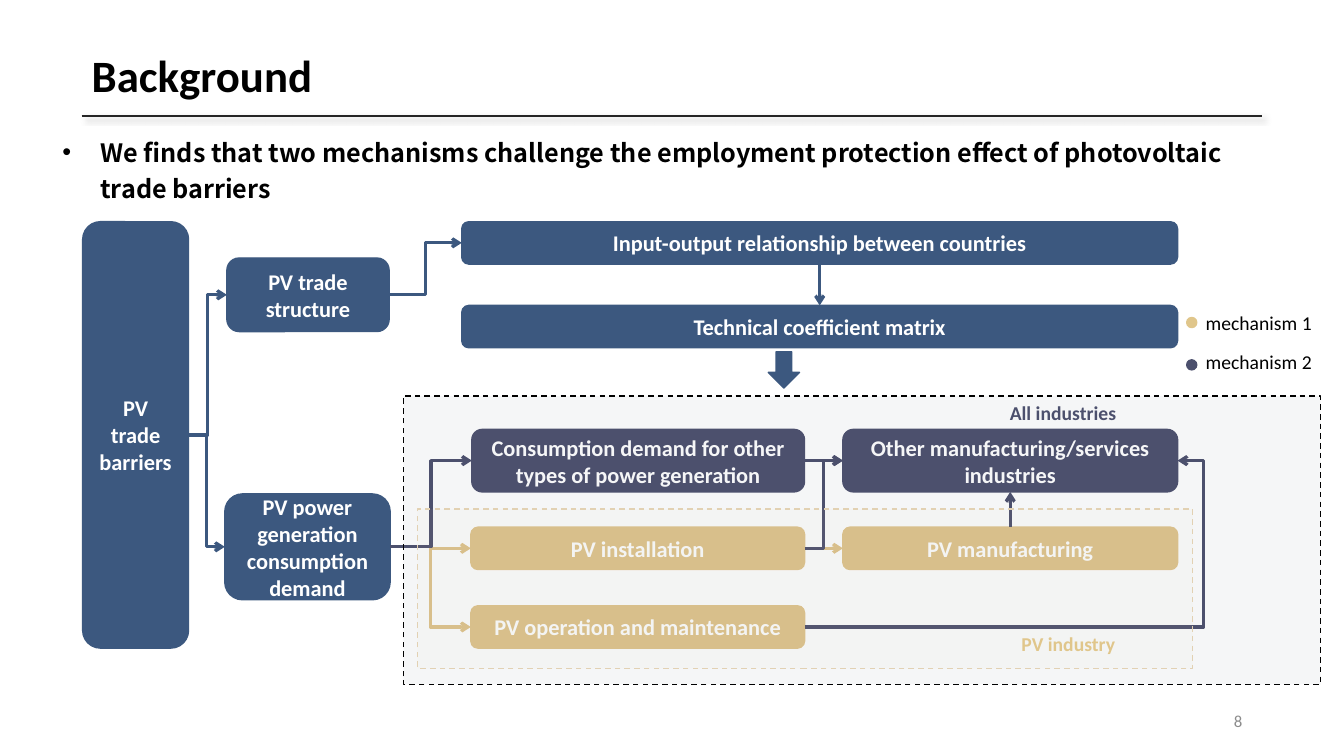
import dataclasses
import enum

import lxml.etree
import pptx
import pptx.dml.color
import pptx.enum.dml
import pptx.enum.shapes
import pptx.enum.text
import pptx.oxml.ns
import pptx.shapes.base
import pptx.shapes.connector
import pptx.shapes.autoshape
import pptx.text.text
import pptx.util

Inches = pptx.util.Inches
Kind = pptx.enum.shapes.MSO_SHAPE
Connector = pptx.enum.shapes.MSO_CONNECTOR
Align = pptx.enum.text.PP_ALIGN
Anchor = pptx.enum.text.MSO_ANCHOR


@dataclasses.dataclass(frozen=True)
class Theme:
    navy: str = "3C587F"
    gold: str = "E0C68B"
    pale_gold: str = "EBD8B7"
    purple: str = "4C506D"
    black: str = "000000"
    rule: str = "262626"
    shadow: str = "808080"
    gray: str = "8C8C8C"
    white: str = "FFFFFF"
    font: str = "Calibri"
    body_font: str = "Noto Sans CJK SC"
    title_size: int = 32
    body_size: int = 18
    box_size: int = 16
    label_size: int = 14
    number_size: int = 12
    outline: float = 1
    link: float = 2.25


THEME = Theme()


class Side(enum.IntEnum):
    TOP = 0
    LEFT = 1
    BOTTOM = 2
    RIGHT = 3


@dataclasses.dataclass(frozen=True)
class Area:
    left: float
    top: float
    width: float
    height: float

    def lengths(self) -> tuple:
        return tuple(Inches(value) for value in dataclasses.astuple(self))


@dataclasses.dataclass(frozen=True)
class Box:
    key: str
    text: str
    area: Area
    color: str


@dataclasses.dataclass(frozen=True)
class Link:
    start: str
    end: str
    color: str
    elbow: bool = True
    start_side: Side = Side.RIGHT
    end_side: Side = Side.LEFT
    turn: float = 0.5


@dataclasses.dataclass(frozen=True)
class Label:
    text: str
    area: Area
    color: str
    size: int = THEME.label_size
    bold: bool = False
    align: Align = Align.LEFT
    anchor: Anchor = Anchor.TOP


@dataclasses.dataclass(frozen=True)
class Zone:
    area: Area
    fill: str
    line: str


BOXES = (
    Box("barriers", "PV trade barriers", Area(0.82, 2.2, 1.05, 4.23), THEME.navy),
    Box("demand", "PV power generation consumption demand", Area(2.23, 4.9, 1.64, 1.05), THEME.navy),
    Box("structure", "PV trade structure", Area(2.25, 2.56, 1.61, 0.73), THEME.navy),
    Box("relationship", "Input-output relationship between countries", Area(4.58, 2.2, 7.1, 0.42), THEME.navy),
    Box("matrix", "Technical coefficient matrix", Area(4.58, 3.03, 7.1, 0.42), THEME.navy),
    Box("installation", "PV installation", Area(4.67, 5.23, 3.31, 0.42), THEME.gold),
    Box("maintenance", "PV operation and maintenance", Area(4.67, 6.01, 3.31, 0.42), THEME.gold),
    Box("manufacturing", "PV manufacturing", Area(8.36, 5.23, 3.32, 0.42), THEME.gold),
    Box("other_power", "Consumption demand for other types of power generation", Area(4.68, 4.26, 3.3, 0.62), THEME.purple),
    Box("other_industries", "Other manufacturing/services industries", Area(8.36, 4.26, 3.32, 0.62), THEME.purple),
)
LINKS = (
    Link("barriers", "structure", THEME.navy),
    Link("barriers", "demand", THEME.navy),
    Link("structure", "relationship", THEME.navy),
    Link("relationship", "matrix", THEME.navy, False, Side.BOTTOM, Side.TOP),
    Link("demand", "maintenance", THEME.gold),
    Link("demand", "installation", THEME.gold),
    Link("demand", "other_power", THEME.purple),
    Link("installation", "manufacturing", THEME.gold, False),
    Link("other_power", "other_industries", THEME.purple, False),
    Link("manufacturing", "other_industries", THEME.purple, False, Side.TOP, Side.BOTTOM),
    Link("maintenance", "other_industries", THEME.purple, True, Side.RIGHT, Side.RIGHT, 1.07),
    Link("installation", "other_industries", THEME.purple),
)
ZONES = (
    Zone(Area(4.14, 5.05, 7.69, 1.58), THEME.pale_gold, THEME.pale_gold),
    Zone(Area(4, 3.93, 9.1, 2.86), THEME.purple, THEME.black),
)
LABELS = (
    Label("PV industry", Area(9.86, 6.22, 1.3, 0.34), THEME.gold, bold=True, align=Align.RIGHT),
    Label("All industries", Area(9.75, 3.93, 1.42, 0.34), THEME.purple, bold=True, align=Align.RIGHT),
    Label("8", Area(9.42, 6.95, 3, 0.4), THEME.gray, THEME.number_size, align=Align.RIGHT, anchor=Anchor.MIDDLE),
)
LEGEND = (
    (Area(11.77, 3.15, 0.1, 0.1), Label("mechanism 1", Area(11.86, 3.04, 1.38, 0.34), THEME.black), THEME.gold),
    (Area(11.77, 3.57, 0.1, 0.1), Label("mechanism 2", Area(11.86, 3.42, 1.38, 0.34), THEME.black), THEME.purple),
)


def rgb(value: str) -> pptx.dml.color.RGBColor:
    return pptx.dml.color.RGBColor.from_string(value)


def add_node(parent, tag: str, **attributes: str):
    return lxml.etree.SubElement(parent, pptx.oxml.ns.qn(tag), attributes)


def write(frame: pptx.text.text.TextFrame, text: str, size: int, color: str, bold: bool,
          align: Align, anchor: Anchor, font: str = THEME.font) -> pptx.text.text._Paragraph:
    frame.auto_size = pptx.enum.text.MSO_AUTO_SIZE.NONE
    frame.word_wrap = True
    frame.vertical_anchor = anchor
    paragraph = frame.paragraphs[0]
    paragraph.text = text
    paragraph.alignment = align
    paragraph.font.name = font
    paragraph.font.size = pptx.util.Pt(size)
    paragraph.font.bold = bold
    paragraph.font.color.rgb = rgb(color)
    return paragraph


def add_filled(shapes, kind: Kind, area: Area, fill: str, line: str) -> pptx.shapes.autoshape.Shape:
    shape = shapes.add_shape(kind, *area.lengths())
    shape.shadow.inherit = False
    shape.fill.solid()
    shape.fill.fore_color.rgb = rgb(fill)
    shape.line.color.rgb = rgb(line)
    shape.line.width = pptx.util.Pt(THEME.outline)
    return shape


def add_box(shapes, box: Box) -> pptx.shapes.autoshape.Shape:
    shape = add_filled(shapes, Kind.ROUNDED_RECTANGLE, box.area, box.color, box.color)
    write(shape.text_frame, box.text, THEME.box_size, THEME.white, True, Align.CENTER, Anchor.MIDDLE)
    return shape


def add_zone(shapes, zone: Zone) -> None:
    shape = add_filled(shapes, Kind.RECTANGLE, zone.area, zone.fill, zone.line)
    shape.line.dash_style = pptx.enum.dml.MSO_LINE.DASH
    color = shape._element.spPr.find(".//" + pptx.oxml.ns.qn("a:srgbClr"))
    add_node(color, "a:alpha", val="5000")


def add_label(shapes, label: Label) -> None:
    frame = shapes.add_textbox(*label.area.lengths()).text_frame
    write(frame, label.text, label.size, label.color, label.bold, label.align, label.anchor)


def style_line(connector: pptx.shapes.connector.Connector, color: str, width: float):
    connector.line.color.rgb = rgb(color)
    connector.line.width = pptx.util.Pt(width)
    return add_node(connector._element.spPr, "a:effectLst")


def add_link(shapes, link: Link, boxes: dict) -> None:
    kind = Connector.ELBOW if link.elbow else Connector.STRAIGHT
    connector = shapes.add_connector(kind, 0, 0, 0, 0)
    connector.begin_connect(boxes[link.start], int(link.start_side))
    connector.end_connect(boxes[link.end], int(link.end_side))
    style_line(connector, link.color, THEME.link)
    add_node(connector.line._get_or_add_ln(), "a:tailEnd", type="arrow")
    if link.elbow:
        guides = connector._element.spPr.find(".//" + pptx.oxml.ns.qn("a:avLst"))
        add_node(guides, "a:gd", name="adj1", fmla=f"val {round(link.turn * 100000)}")


def add_heading(slide) -> None:
    title, body = slide.shapes.title, slide.placeholders[1]
    for shape, area in ((title, Area(0.81, 0.4, 11.5, 0.75)), (body, Area(0.56, 1.24, 12.21, 0.74))):
        shape.left, shape.top, shape.width, shape.height = area.lengths()
    paragraph = write(title.text_frame, "Background", THEME.title_size, THEME.black, True, Align.LEFT, Anchor.MIDDLE)
    paragraph.line_spacing = 0.9
    frame = body.text_frame
    frame.margin_left = frame.margin_right = frame.margin_top = frame.margin_bottom = Inches(0.06)
    paragraph = write(
        frame,
        "We finds that two mechanisms challenge the employment protection effect of photovoltaic trade barriers",
        THEME.body_size, THEME.black, True, Align.LEFT, Anchor.TOP, THEME.body_font)
    paragraph.line_spacing = 1.2
    paragraph.space_before = pptx.util.Pt(0)
    rule = slide.shapes.add_connector(Connector.STRAIGHT, Inches(0.81), Inches(1.15), Inches(12.52), Inches(1.15))
    effects = style_line(rule, THEME.rule, THEME.outline)
    shadow = add_node(effects, "a:outerShdw", blurRad="50800", dist="38100", dir="2700000")
    add_node(add_node(shadow, "a:srgbClr", val=THEME.shadow), "a:alpha", val="40000")


def main() -> None:
    presentation = pptx.Presentation()
    presentation.slide_width, presentation.slide_height = Inches(13.33), Inches(7.5)
    slide = presentation.slides.add_slide(presentation.slide_layouts[1])
    shapes = slide.shapes
    add_heading(slide)
    boxes = {box.key: add_box(shapes, box) for box in BOXES}
    for link in LINKS:
        add_link(shapes, link, boxes)
    for zone in ZONES:
        add_zone(shapes, zone)
    for label in LABELS:
        add_label(shapes, label)
    add_filled(shapes, Kind.DOWN_ARROW, Area(7.62, 3.49, 0.31, 0.36), THEME.navy, THEME.navy)
    legend = shapes.add_group_shape().shapes
    for dot, label, color in LEGEND:
        add_filled(legend, Kind.OVAL, dot, color, color)
        add_label(legend, label)
    presentation.save("out.pptx")


if __name__ == "__main__":
    main()
